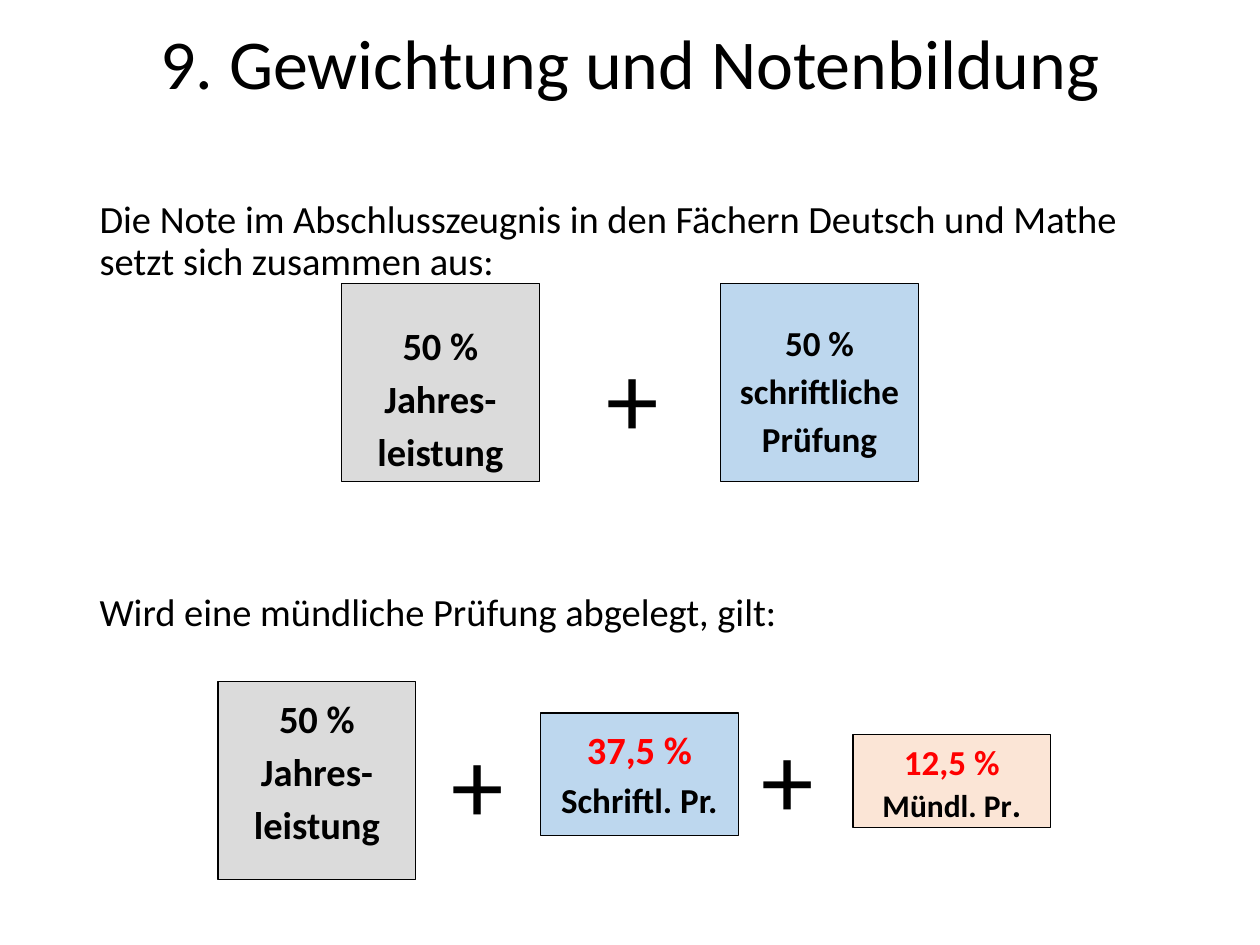
"""Slide on how final grades are weighted and formed."""
from pptx import Presentation
from pptx import util as u
from pptx.dml.color import RGBColor
from pptx.enum import shapes, text
from pptx.oxml.ns import qn

BLACK = RGBColor(0x00, 0x00, 0x00)
WHITE = RGBColor(0xFF, 0xFF, 0xFF)
RED = RGBColor(0xFF, 0x00, 0x00)
GREY = RGBColor(0xDB, 0xDB, 0xDB)
BLUE = RGBColor(0xBD, 0xD7, 0xEE)
PEACH = RGBColor(0xFB, 0xE5, 0xD6)

SIDE = 1.57
YEAR = [("50 %", 22, BLACK), ("Jahres-leistung", 22, BLACK)]
EXAM = [(word, 20, BLACK) for word in ("50 %", "schriftliche", "Prüfung")]
WRITTEN = [("37,5 %", 22, RED), ("Schriftl. Pr.", 20, BLACK)]


class Deck:
    """Holds the style, the current slide and the current group."""

    font = "Calibri"

    def __init__(self):
        self.prs = Presentation()
        self.prs.slide_width = u.Inches(10)
        self.prs.slide_height = u.Inches(7.5)
        self.slide = self.prs.slides.add_slide(self.prs.slide_layouts[1])
        self.group = None

    def start(self):
        self.group = self.slide.shapes.add_group_shape().shapes

    def run(self, para, words, size, color=BLACK, bold=False):
        run = para.add_run()
        run.text = words
        font = run.font
        font.name, font.size, font.bold = self.font, u.Pt(size), bold
        font.color.rgb = color

    def lines(self, frame, rows, bold=True, space=1.15):
        frame.word_wrap = True
        frame.vertical_anchor = text.MSO_ANCHOR.TOP
        for i, (words, size, color) in enumerate(rows):
            para = frame.add_paragraph() if i else frame.paragraphs[0]
            para.alignment = text.PP_ALIGN.CENTER
            para.line_spacing = space
            self.run(para, words, size, color, bold)

    def place(self, holder, left, top, width, height):
        holder.left, holder.top = u.Inches(left), u.Inches(top)
        holder.width, holder.height = u.Inches(width), u.Inches(height)
        frame = holder.text_frame
        frame.auto_size = text.MSO_AUTO_SIZE.NONE
        return frame

    def title(self, words):
        frame = self.place(self.slide.shapes.title, 0.69, 0.17, 8.62, 0.72)
        frame.vertical_anchor = text.MSO_ANCHOR.MIDDLE
        para = frame.paragraphs[0]
        para.alignment = text.PP_ALIGN.CENTER
        para.line_spacing = 0.9
        self.run(para, words, 40)

    def body(self, rows, gap):
        frame = self.place(self.slide.placeholders[1], 0.69, 1.54, 8.62, 4.76)
        for i, words in enumerate(rows):
            para = frame.add_paragraph() if i else frame.paragraphs[0]
            props = para._p.get_or_add_pPr()
            props.set("marL", "0")
            props.set("indent", "0")
            props.append(props.makeelement(qn("a:buNone"), {}))
            para.line_spacing = 0.9
            para.space_before = u.Pt(gap if i else 0)
            self.run(para, words, 22)

    def box(self, left, top, width, height, fill, rows, line=BLACK,
            inset=0.05, **style):
        rect = self.group.add_shape(
            shapes.MSO_SHAPE.RECTANGLE, u.Inches(left), u.Inches(top),
            u.Inches(width), u.Inches(height))
        rect.shadow.inherit = False
        rect.fill.solid()
        rect.fill.fore_color.rgb = fill
        rect.line.color.rgb = line
        rect.line.width = u.Pt(0.75)
        rect.text_frame.margin_top = u.Inches(inset)
        self.lines(rect.text_frame, rows, **style)
        return rect

    def plus(self, left, top):
        area = self.group.add_textbox(
            u.Inches(left), u.Inches(top), u.Inches(0.9), u.Inches(1.12))
        self.lines(area.text_frame, [("+", 60, BLACK)], bold=False)


def main():
    deck = Deck()
    deck.title("9. Gewichtung und Notenbildung")
    deck.body(["Die Note im Abschlusszeugnis in den Fächern Deutsch und "
               "Mathe setzt sich zusammen aus:",
               "Wird eine mündliche Prüfung abgelegt, gilt:"], gap=177)

    deck.start()
    deck.box(4.29, 5.66, SIDE, 0.97, BLUE, WRITTEN)
    deck.box(1.73, 5.41, SIDE, SIDE, GREY, YEAR)
    deck.plus(3.34, 5.5)
    deck.plus(5.8, 5.46)
    oral = deck.box(6.77, 5.83, SIDE, 0.74, PEACH,
                    [("12,5 %", 20, RED), ("Mündl. Pr", 18, BLACK)], space=1)
    deck.run(oral.text_frame.paragraphs[1], ".", 20, bold=True)

    deck.start()
    for left, fill, rows in ((2.71, GREY, YEAR), (5.72, BLUE, EXAM)):
        deck.box(left, 2.25, SIDE, SIDE, fill, rows, inset=0.25)
    deck.box(4.57, 2.44, 0.9, 1.12, WHITE, [("+", 60, BLACK)],
             line=WHITE, bold=False)
    deck.prs.save("out.pptx")


if __name__ == "__main__":
    main()
